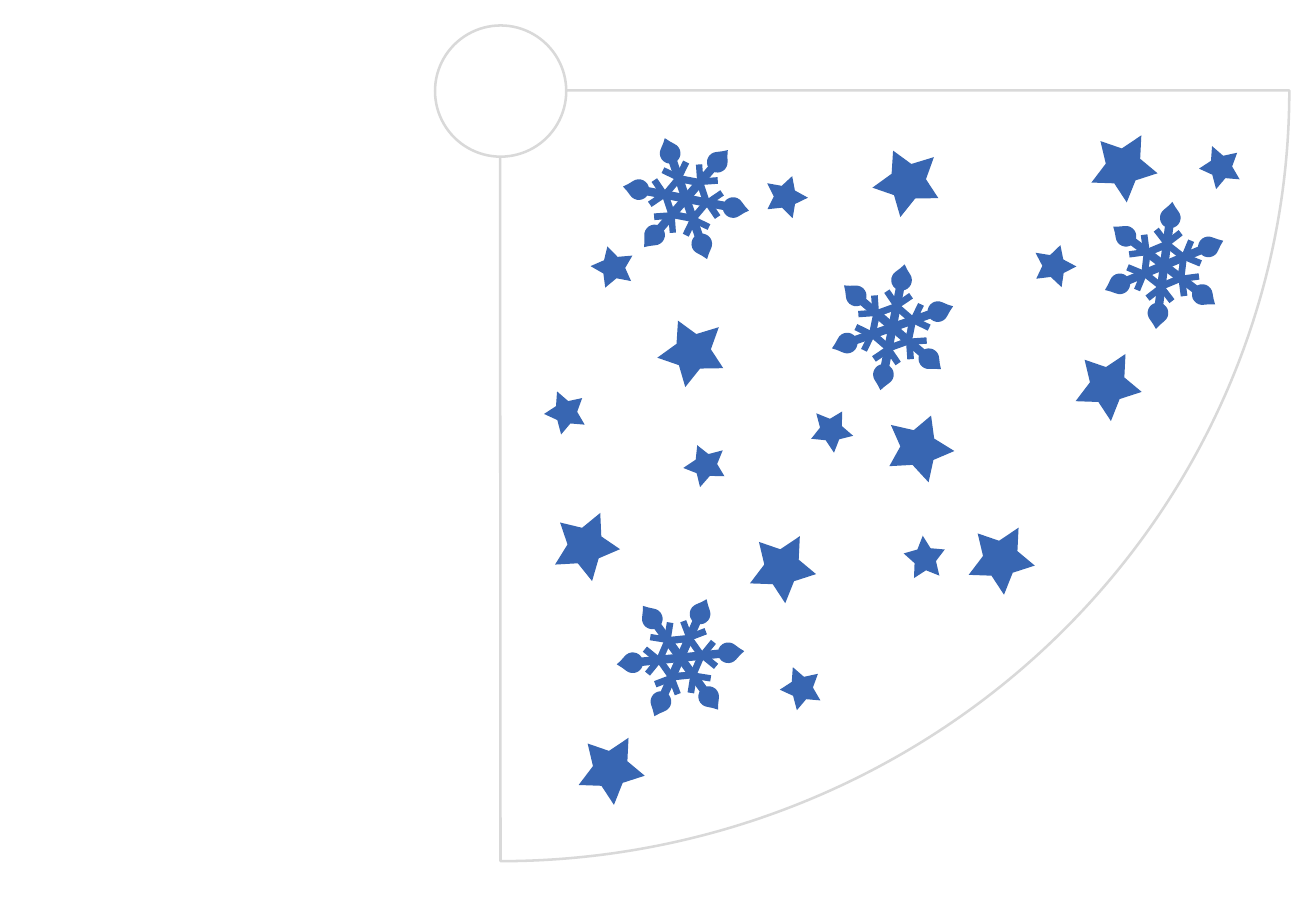
from math import cos, radians, sin

from pptx import Presentation
from pptx.dml.color import RGBColor
from pptx.enum.shapes import MSO_SHAPE
from pptx.util import Pt

PIE = MSO_SHAPE.PIE
CIRCLE = MSO_SHAPE.OVAL
HEXAGON = MSO_SHAPE.HEXAGON
BAR = MSO_SHAPE.RECTANGLE
CHEVRON = MSO_SHAPE.CORNER
DROP = MSO_SHAPE.TEAR
STAR = MSO_SHAPE.STAR_5_POINT

EMU_PER_PX = 4572
SLIDE_SIZE = (2166, 1500)
BLUE, WHITE, GREY = "3866B2", "FFFFFF", "D9D9D9"

LARGE_STAR, SMALL_STAR = 108, 68
LARGE_STARS = [
    (912, 840, 24), (1454, 680, 309.5), (1444, 242, 46.4),
    (1798, 216, 29.4), (1772, 576, 29.4), (1236, 876, 29.4),
    (1596, 862, 29.4), (954, 1208, 29.4), (1090, 522, 46.4),
]
SMALL_STARS = [
    (1332, 672, 318.6), (972, 406, 273), (1974, 238, 337.4),
    (1284, 1096, 337.4), (1488, 882, 354.5), (1698, 402, 305.7),
    (1256, 288, 306.7), (896, 642, 337.4), (1130, 730, 48.8),
]
SNOWFLAKES = [
    (1129, 327, 340.8), (1916, 437, 307.4),
    (1469, 539, 10.9), (1120, 1083, 324.1),
]


def px(length):
    """Turn px into EMU."""
    return round(length * EMU_PER_PX)


def colour(value):
    """Turn a hex string into a colour."""
    return RGBColor.from_string(value)


def add_figure(shapes, kind, box, fill, angle=0, adjust=(), outline=None):
    """Add a filled preset shape in a box of left, top, width, height."""
    figure = shapes.add_shape(kind, *map(px, box))
    figure.shadow.inherit = False
    figure.rotation = angle % 360
    for index, value in enumerate(adjust):
        figure.adjustments[index] = value
    figure.fill.solid()
    figure.fill.fore_color.rgb = colour(fill)
    if outline:
        figure.line.color.rgb = colour(outline)
        figure.line.width = Pt(1.5)
    else:
        figure.line.fill.background()


def centred(x, y, width, height):
    """Return the box of the given size around a centre."""
    return x - width / 2, y - height / 2, width, height


def add_hat_outline(shapes, left, top):
    """Draw the quarter-circle hat sheet and the circle at its corner."""
    add_figure(shapes, PIE, (left - 1192, top - 1162, 2598, 2538), WHITE,
               adjust=(0, 53.98), outline=GREY)
    add_figure(shapes, CIRCLE, (left, top, 216, 216), WHITE, outline=GREY)


def add_snowflake(shapes, x, y, tilt):
    """Draw a six-armed snowflake around its centre."""
    flake = shapes.add_group_shape().shapes
    for width, height, fill in ((82, 72, BLUE), (56, 48, WHITE)):
        add_figure(flake, HEXAGON, centred(x, y, width, height), fill,
                   tilt + 30, (0.28,))
    for turn in range(0, 180, 60):
        add_figure(flake, BAR, centred(x, y, 14, 138), BLUE, tilt + turn)
    for turn in range(0, 360, 60):
        arm = tilt + turn
        for kind, reach, adjust in ((CHEVRON, 53, (0.32, 0.31)),
                                    (DROP, 79, (1.1,))):
            arm_x = x + reach * sin(radians(arm))
            arm_y = y - reach * cos(radians(arm))
            add_figure(flake, kind, centred(arm_x, arm_y, 34, 34), BLUE,
                       arm - 45, adjust)


def add_stars(shapes, stars, size):
    """Scatter stars of one size."""
    for left, top, tilt in stars:
        add_figure(shapes, STAR, (left, top, size, size), BLUE, tilt, (0.26,))


def main():
    """Build the party hat slide."""
    deck = Presentation()
    deck.slide_width, deck.slide_height = map(px, SLIDE_SIZE)
    shapes = deck.slides.add_slide(deck.slide_layouts[6]).shapes
    add_hat_outline(shapes, 716, 42)
    for x, y, tilt in SNOWFLAKES:
        add_snowflake(shapes, x, y, tilt)
    add_stars(shapes, LARGE_STARS, LARGE_STAR)
    add_stars(shapes, SMALL_STARS, SMALL_STAR)
    deck.save("out.pptx")


if __name__ == "__main__":
    main()
